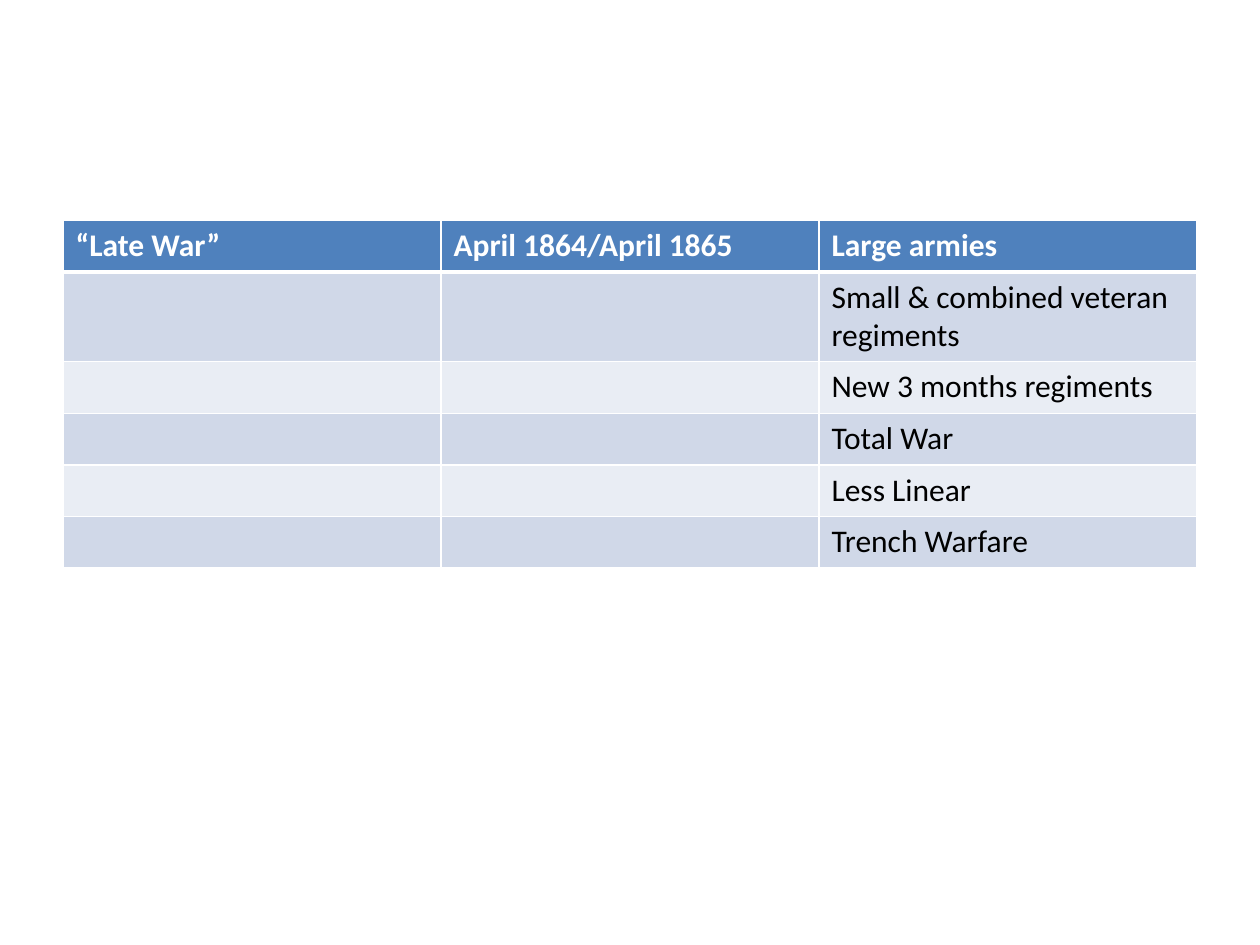
from lxml import etree
from pptx import Presentation
from pptx.dml.color import RGBColor
from pptx.oxml.ns import qn
from pptx.util import Inches, Pt

WHITE = RGBColor(0xFF, 0xFF, 0xFF)
BLACK = RGBColor(0x00, 0x00, 0x00)
HEADER_BLUE = RGBColor(0x4F, 0x81, 0xBD)
BAND_DARK = RGBColor(0xD0, 0xD8, 0xE8)
BAND_LIGHT = RGBColor(0xE9, 0xED, 0xF4)

HEADINGS = ["“Late War”", "April 1864/April 1865", "Large armies"]
FEATURES = [
    "Small & combined veteran regiments",
    "New 3 months regiments",
    "Total War",
    "Less Linear",
    "Trench Warfare",
]


def add_border(cell, side, points):
    """Draw a white border; call before setting the fill, in the order L, R, T, B."""
    properties = cell._tc.get_or_add_tcPr()
    line = etree.SubElement(properties, qn(f"a:ln{side}"), w=str(Pt(points)))
    fill = etree.SubElement(line, qn("a:solidFill"))
    etree.SubElement(fill, qn("a:srgbClr"), val=str(WHITE))


prs = Presentation()
prs.slide_width = Inches(10)
prs.slide_height = Inches(7.5)
slide = prs.slides.add_slide(prs.slide_layouts[6])

rows = [HEADINGS] + [["", "", feature] for feature in FEATURES]
row_height = Inches(0.41)
war_table = slide.shapes.add_table(
    len(rows), len(HEADINGS), Inches(0.5), Inches(1.75), Inches(9), row_height * len(rows)
).table

for row_index, texts in enumerate(rows):
    is_header = row_index == 0
    if is_header:
        background = HEADER_BLUE
    else:
        background = BAND_DARK if row_index % 2 else BAND_LIGHT
    war_table.rows[row_index].height = row_height

    for column_index, text in enumerate(texts):
        cell = war_table.cell(row_index, column_index)
        for side in "LRTB":
            touches_header_rule = (is_header and side == "B") or (row_index == 1 and side == "T")
            add_border(cell, side, 3 if touches_header_rule else 1)
        cell.fill.solid()
        cell.fill.fore_color.rgb = background

        paragraph = cell.text_frame.paragraphs[0]
        paragraph.text = text
        paragraph.font.size = Pt(18)
        for run in paragraph.runs:
            run.font.name = "Calibri"
            run.font.size = Pt(18)
            run.font.bold = is_header
            run.font.color.rgb = WHITE if is_header else BLACK

prs.save("out.pptx")
